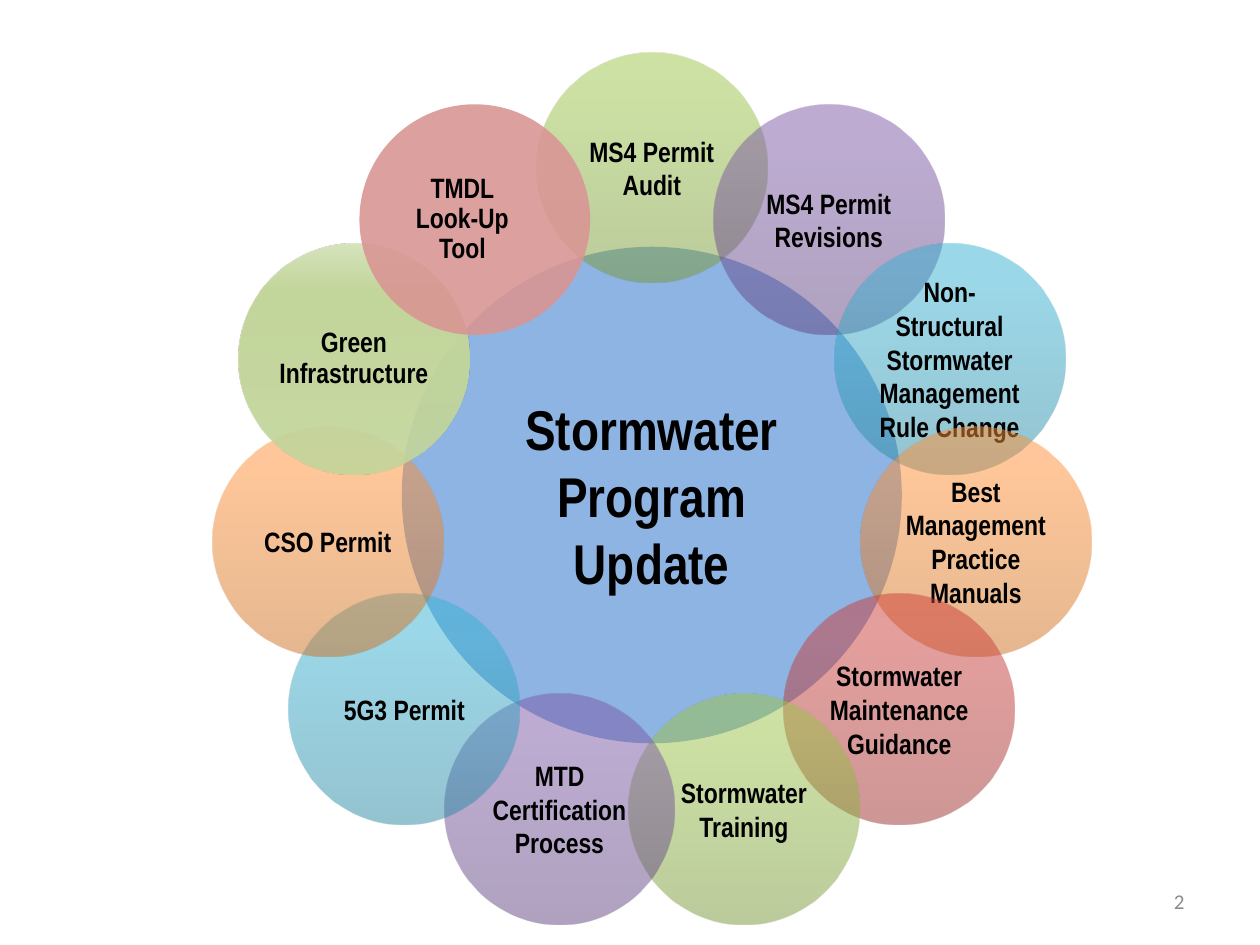
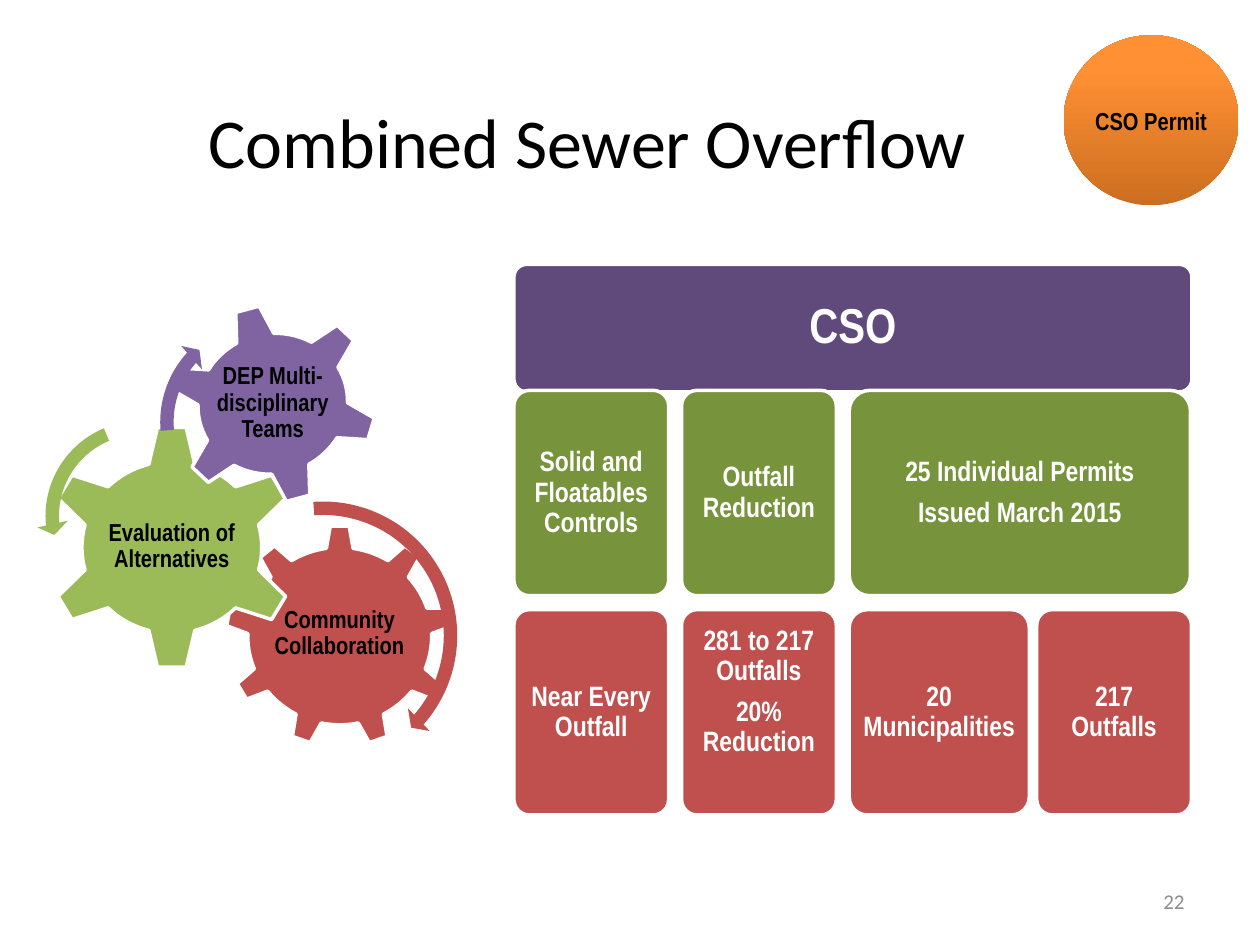
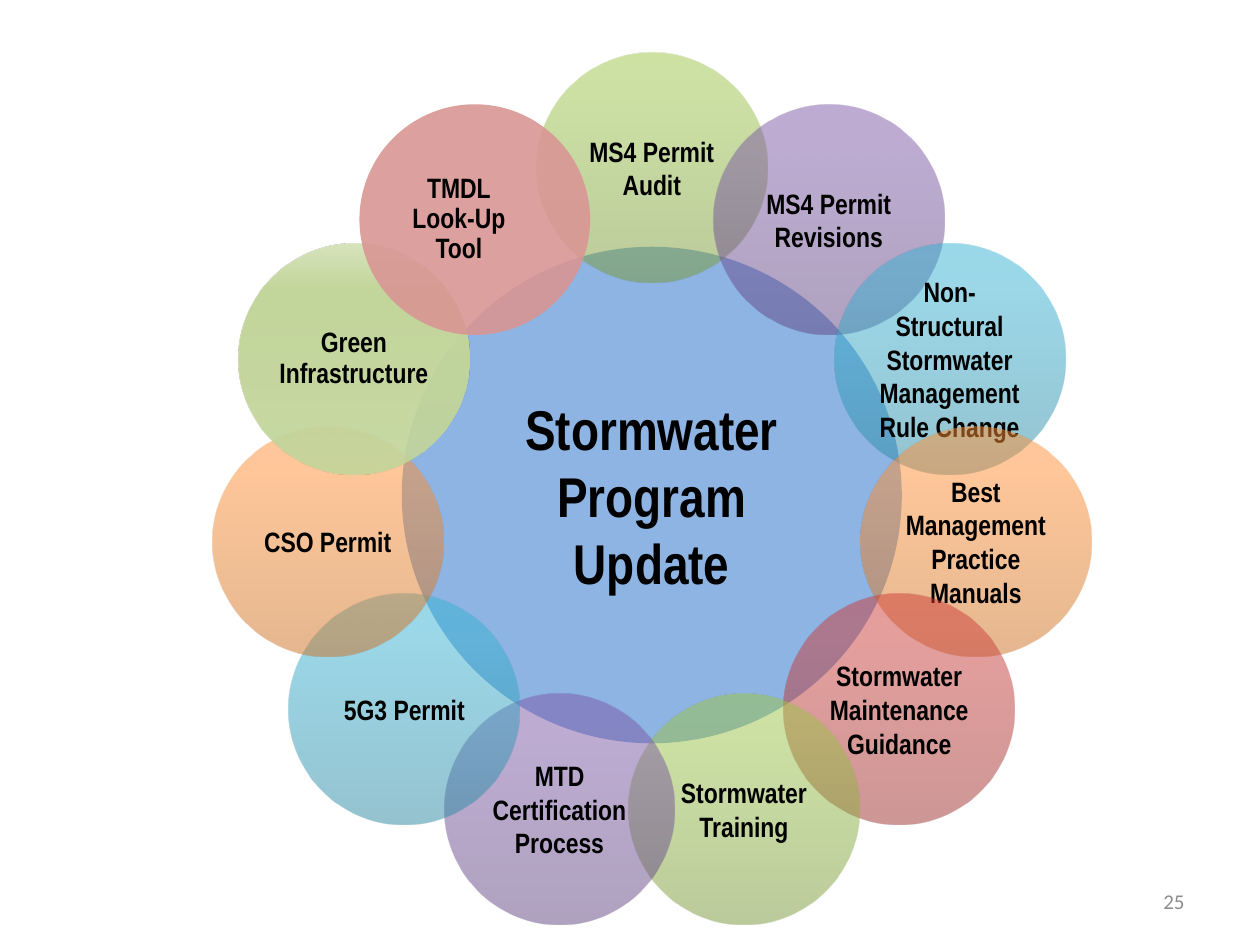
"""Builds the stormwater programme slides: two topic wheels and a sewer overflow overview."""
from dataclasses import dataclass
from math import cos, pi, sin

from lxml import etree
from pptx import Presentation
from pptx.dml.color import RGBColor
from pptx.enum.shapes import MSO_SHAPE
from pptx.enum.text import MSO_ANCHOR, PP_ALIGN
from pptx.oxml.ns import qn
from pptx.util import Cm, Pt

CENTER, RIGHT = PP_ALIGN.CENTER, PP_ALIGN.RIGHT
MIDDLE = MSO_ANCHOR.MIDDLE
ELLIPSE, TILE = MSO_SHAPE.OVAL, MSO_SHAPE.ROUNDED_RECTANGLE
GEAR_6, GEAR_9 = MSO_SHAPE.GEAR_6, MSO_SHAPE.GEAR_9
ARROW, LEFT_ARROW = MSO_SHAPE.CIRCULAR_ARROW, MSO_SHAPE.LEFT_CIRCULAR_ARROW


@dataclass(frozen=True)
class Theme:
    label_font: str = "Arial Narrow"
    body_font: str = "Calibri"
    black: str = "000000"
    white: str = "FFFFFF"
    grey: str = "8C8C8C"
    hub: str = "8EB4E3"
    red: str = "C0504D"
    green: str = "9BBB59"
    purple: str = "8064A2"
    dark_green: str = "77933C"
    dark_purple: str = "604A7B"
    green_fade: tuple = ("779737", "9BC348", "9DC746")
    purple_fade: tuple = ("5F4480", "7B58A6", "7C57A8")
    aqua_fade: tuple = ("2A88A2", "37B1D2", "34B4D6")
    orange_fade: tuple = ("CC6E20", "FF9034", "FF9136")
    red_fade: tuple = ("9C2F2D", "CB3E3A", "CE3B37")
    pale_green_fade: tuple = ("C3D69B", "C3D69B", "D7E4BD")
    pale_red: str = "D99694"
    title_size: int = 40
    hub_size: int = 32
    header_size: int = 28
    label_size: int = 16
    small_size: int = 14
    number_size: int = 12


THEME = Theme()


def draw(slide, kind, box, fill, opacity=(100, 100, 100), outlined=False, adjustments=()):
    shape = slide.shapes.add_shape(kind, *map(Cm, box))
    shape.shadow.inherit = False
    for index, value in enumerate(adjustments):
        shape.adjustments[index] = value
    if isinstance(fill, str):
        shape.fill.solid()
        shape.fill.fore_color.rgb = RGBColor.from_string(fill)
        colors = shape.element.spPr.iter(qn("a:srgbClr"))
    else:
        shape.fill.gradient()
        shape.fill.gradient_angle = 90
        stops = shape.element.spPr.find(".//" + qn("a:gsLst"))
        for stop in list(stops):
            stops.remove(stop)
        for position, color in zip((0, 80, 100), fill):
            stop = etree.SubElement(stops, qn("a:gs"), pos=str(position * 1000))
            etree.SubElement(stop, qn("a:srgbClr"), val=color)
        colors = stops.iter(qn("a:srgbClr"))
    for color, percent in zip(list(colors), opacity):
        if percent < 100:
            etree.SubElement(color, qn("a:alpha"), val=str(percent * 1000))
    if outlined:
        shape.line.color.rgb = RGBColor.from_string(THEME.white)
        shape.line.width = Pt(2)
    else:
        shape.line.fill.background()
    return shape


def write(shape, text, size, color=THEME.black, inset=0.05, spacing=1.0,
          font=THEME.label_font, bold=True, align=CENTER):
    frame = shape.text_frame
    frame.word_wrap = True
    frame.vertical_anchor = MIDDLE
    frame.margin_left = frame.margin_right = Cm(inset)
    frame.margin_top = frame.margin_bottom = Cm(inset)
    frame.text = text
    for paragraph in frame.paragraphs:
        paragraph.alignment = align
        paragraph.line_spacing = spacing
        paragraph.space_after = Pt(6)
        paragraph.font.name = font
        paragraph.font.size = Pt(size)
        paragraph.font.bold = bold
        paragraph.font.color.rgb = RGBColor.from_string(color)
    return frame


prs = Presentation()
prs.slide_width, prs.slide_height = Cm(25.4), Cm(19.05)
slides = []
for page in ("2", "22", "25"):
    slide = prs.slides.add_slide(prs.slide_layouts[6])
    number = slide.shapes.add_textbox(Cm(18.21), Cm(17.65), Cm(5.92), Cm(1.02))
    write(number, page, THEME.number_size, THEME.grey, 0.25,
          font=THEME.body_font, bold=False, align=RIGHT)
    slides.append(slide)
opening, overflow, closing = slides

HALF = (50, 50, 50)
TOPICS = [
    ("MS4 Permit Audit", THEME.green_fade, HALF, 1.0),
    ("MS4 Permit Revisions", THEME.purple_fade, HALF, 1.0),
    ("Non- Structural Stormwater Management Rule Change", THEME.aqua_fade, HALF, 1.0),
    ("Best Management Practice Manuals", THEME.orange_fade, HALF, 1.0),
    ("Stormwater Maintenance Guidance", THEME.red_fade, HALF, 1.0),
    ("Stormwater Training", THEME.green_fade, HALF, 1.0),
    ("MTD Certification Process", THEME.purple_fade, HALF, 1.0),
    ("5G3 Permit", THEME.aqua_fade, HALF, 1.0),
    ("CSO Permit", THEME.orange_fade, HALF, 1.0),
    ("Green Infrastructure", THEME.pale_green_fade, (90, 100, 100), 0.9),
    ("TMDL\nLook-Up Tool", THEME.pale_red, (90,), 0.9),
]
HUB_X, HUB_Y, HUB_WIDTH, HUB_HEIGHT = 13.14, 9.98, 10.08, 10.01
RING_RADIUS, PETAL = 6.6, 4.65

for wheel, tmdl_indent in ((opening, 0.5), (closing, 0.64)):
    hub = draw(wheel, ELLIPSE, (HUB_X - HUB_WIDTH / 2, HUB_Y - HUB_HEIGHT / 2,
                                HUB_WIDTH, HUB_HEIGHT), THEME.hub)
    write(hub, "Stormwater Program Update", THEME.hub_size, inset=0.1)
    for index, (topic, fill, opacity, spacing) in enumerate(TOPICS):
        angle = 2 * pi * index / len(TOPICS)
        left = HUB_X + RING_RADIUS * sin(angle) - PETAL / 2
        top = HUB_Y - RING_RADIUS * cos(angle) - PETAL / 2
        petal = draw(wheel, ELLIPSE, (left, top, PETAL, PETAL), fill, opacity)
        label = write(petal, topic, THEME.label_size, spacing=spacing)
    tmdl = label.paragraphs[0]
    tmdl.space_after = Pt(0)
    tmdl._p.get_or_add_pPr().set("marR", str(Cm(tmdl_indent)))

title = overflow.shapes.add_textbox(Cm(0.41), Cm(1.24), Cm(22.86), Cm(3.18))
write(title, "Combined Sewer Overflow", THEME.title_size, inset=0.25,
      font=THEME.body_font, bold=False)

GEARS = [
    ("Community Collaboration", GEAR_9, (4.55, 10.59, 4.6, 4.47), 0,
     THEME.red, (5.46, 11.63, 2.77, 2.29)),
    ("Evaluation of Alternatives", GEAR_6, (0.91, 8.56, 5.11, 4.95), 0,
     THEME.green, (2.18, 9.8, 2.57, 2.44)),
    ("DEP Multi-disciplinary Teams", GEAR_6, (3.38, 6.12, 4.24, 4.04), 345,
     THEME.purple, (4.32, 6.99, 2.36, 2.29)),
]
for name, kind, box, rotation, color, label_box in GEARS:
    gear = draw(overflow, kind, box, color, outlined=True)
    gear.rotation = rotation
    label = overflow.shapes.add_textbox(*map(Cm, label_box))
    write(label, name, THEME.small_size, spacing=0.9, inset=0)

TURNS = [
    (ARROW, 3.63, 9.93, 5.77, THEME.red, (0.047, 2.99, 24.768, 159.488, 0.055)),
    (LEFT_ARROW, 0.74, 8.31, 4.19, THEME.green, (0.065, 4.3, 104.891, 148.378, 0.075)),
    (ARROW, 3.05, 6.25, 4.52, THEME.purple, (0.06, 3.941, 133.138, 105.082, 0.07)),
]
for kind, left, top, size, color, adjustments in TURNS:
    draw(overflow, kind, (left, top, size, size), color, adjustments=adjustments)

badge = draw(overflow, ELLIPSE, (21.44, 0.71, 3.53, 3.43), THEME.orange_fade)
write(badge, "CSO Permit", THEME.small_size)

COLUMNS = [10.36 + 3.38 * column for column in range(3)] + [20.9]
NARROW, MEDIUM, WIDE, TILE_HEIGHT = 3.12, 3.63, 6.88, 4.14
header = draw(overflow, TILE, (COLUMNS[0], 5.33, 13.67, 2.57), THEME.dark_purple,
              outlined=True, adjustments=(0.1,))
write(header, "CSO", THEME.header_size, THEME.white, 0.3, 0.9)

ROWS = [
    (7.87, THEME.dark_green, [
        ("Solid and Floatables Controls", NARROW),
        ("Outfall Reduction", NARROW),
        ("25 Individual Permits\nIssued March 2015", WIDE)]),
    (12.29, THEME.red, [
        ("Near Every Outfall", NARROW),
        ("281 to 217 Outfalls\n20% Reduction", NARROW),
        ("20 Municipalities", MEDIUM),
        ("217 Outfalls", NARROW)]),
]
for top, color, facts in ROWS:
    for left, (fact, width) in zip(COLUMNS, facts):
        tile = draw(overflow, TILE, (left, top, width, TILE_HEIGHT), color,
                    outlined=True, adjustments=(0.1,))
        label = write(tile, fact, THEME.label_size, THEME.white, 0.18, 0.9)
        if fact.startswith("281"):
            label.margin_bottom = Cm(1)

prs.save("out.pptx")
